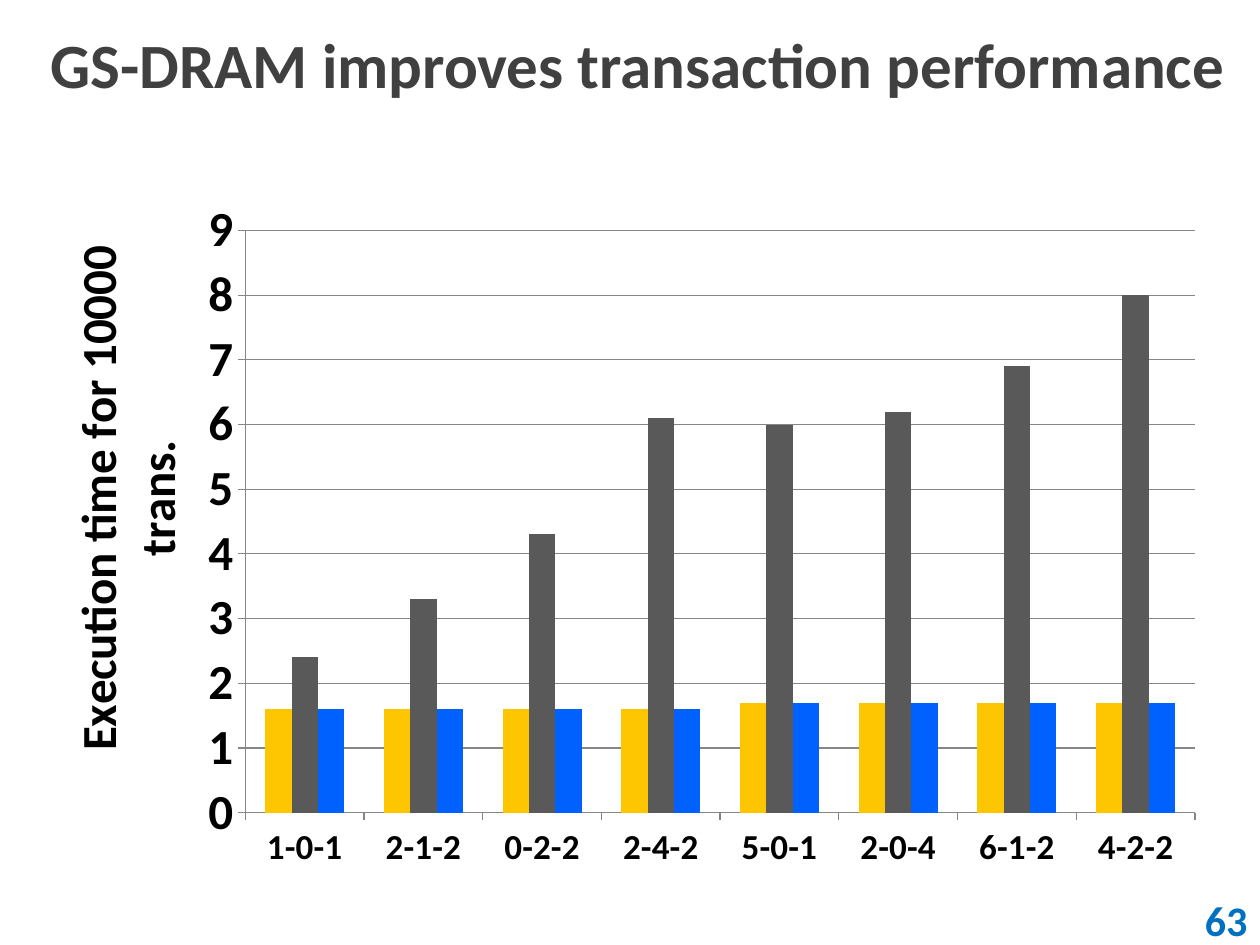
from dataclasses import dataclass

from lxml.etree import SubElement
from pptx import Presentation
from pptx.chart.data import CategoryChartData
from pptx.dml.color import RGBColor as Rgb
from pptx.enum.chart import XL_CHART_TYPE as ChartType, XL_TICK_MARK as Tick
from pptx.enum.shapes import MSO_SHAPE as Preset
from pptx.enum.text import MSO_ANCHOR as Anchor, PP_ALIGN as Align
from pptx.oxml.ns import qn
from pptx.util import Cm, Pt


@dataclass(frozen=True)
class Theme:
    font: str = "Calibri"
    paper: Rgb = Rgb(0xFF, 0xFF, 0xFF)
    heading: Rgb = Rgb(0x40, 0x40, 0x40)
    number: Rgb = Rgb(0x00, 0x70, 0xC0)
    ink: Rgb = Rgb(0x00, 0x00, 0x00)
    rule: Rgb = Rgb(0x86, 0x86, 0x86)
    yellow: Rgb = Rgb(0xFD, 0xC6, 0x00)
    grey: Rgb = Rgb(0x59, 0x59, 0x59)
    blue: Rgb = Rgb(0x00, 0x61, 0xFF)
    heading_size: Pt = Pt(36)
    number_size: Pt = Pt(24)
    value_size: Pt = Pt(28)
    category_size: Pt = Pt(20)


@dataclass(frozen=True)
class Label:
    text: str
    left: float
    top: float
    width: float
    height: float
    size: Pt
    color: Rgb
    align: Align
    inset: float


@dataclass(frozen=True)
class Series:
    name: str
    values: tuple
    color: Rgb


THEME = Theme()
LABELS = (
    Label("GS-DRAM improves transaction performance", 0, 0, 25.4, 2.54,
          THEME.heading_size, THEME.heading, Align.LEFT, 1.02),
    Label("63", 20.32, 18.03, 5.08, 1.02,
          THEME.number_size, THEME.number, Align.RIGHT, 0.25),
)
MIXES = ("1-0-1", "2-1-2", "0-2-2", "2-4-2", "5-0-1", "2-0-4", "6-1-2", "4-2-2")
STEADY = (1.6, 1.6, 1.6, 1.6, 1.7, 1.7, 1.7, 1.7)
TIMES = (
    Series("Series 1", STEADY, THEME.yellow),
    Series("Series 2", (2.4, 3.3, 4.3, 6.1, 6, 6.2, 6.9, 8), THEME.grey),
    Series("Series 3", STEADY, THEME.blue),
)


def apply_format(target, values: dict) -> None:
    for name, value in values.items():
        setattr(target, name, value)


def style_font(font, size: Pt, color: Rgb) -> None:
    apply_format(font, {"name": THEME.font, "size": size, "bold": True})
    font.color.rgb = color


def draw_label(slide, label: Label) -> None:
    box = slide.shapes.add_shape(Preset.RECTANGLE, Cm(label.left), Cm(label.top),
                                 Cm(label.width), Cm(label.height))
    box.shadow.inherit = False
    box.fill.solid()
    box.fill.fore_color.rgb = THEME.paper
    box.line.fill.background()
    frame = box.text_frame
    apply_format(frame, {
        "word_wrap": True, "vertical_anchor": Anchor.MIDDLE,
        "margin_left": Cm(label.inset), "margin_right": Cm(0.25),
        "margin_top": Cm(0.13), "margin_bottom": Cm(0.13),
    })
    paragraph = frame.paragraphs[0]
    paragraph.alignment = label.align
    run = paragraph.add_run()
    run.text = label.text
    style_font(run.font, label.size, label.color)


def place_in_chart(part, index: int, fractions: dict) -> None:
    for old in part.findall(qn("c:layout")):
        part.remove(old)
    layout = SubElement(part, qn("c:layout"))
    part.insert(index, layout)
    manual = SubElement(layout, qn("c:manualLayout"))
    for tag, value in fractions.items():
        SubElement(manual, qn(f"c:{tag}")).set("val", str(value))


def style_axis(axis, size: Pt) -> None:
    apply_format(axis, {"major_tick_mark": Tick.OUTSIDE, "minor_tick_mark": Tick.NONE})
    style_font(axis.tick_labels.font, size, THEME.ink)
    axis.format.line.color.rgb = THEME.rule


def draw_times(slide) -> None:
    data = CategoryChartData()
    data.categories = MIXES
    for series in TIMES:
        data.add_series(series.name, series.values)
    chart = slide.shapes.add_chart(ChartType.COLUMN_CLUSTERED, Cm(0.64), Cm(3.81),
                                   Cm(23.93), Cm(13.97), data).chart
    apply_format(chart, {"has_legend": False, "has_title": False})
    style_font(chart.font, THEME.value_size, THEME.ink)

    plot = chart.plots[0]
    apply_format(plot, {"gap_width": 150, "overlap": 0, "vary_by_categories": False})
    for bars, series in zip(plot.series, TIMES):
        bars.format.fill.solid()
        bars.format.fill.fore_color.rgb = series.color

    times = chart.value_axis
    style_axis(chart.category_axis, THEME.category_size)
    style_axis(times, THEME.value_size)
    apply_format(times, {"minimum_scale": 0, "maximum_scale": 9, "major_unit": 1,
                         "has_major_gridlines": True})
    times.major_gridlines.format.line.color.rgb = THEME.rule
    times.tick_labels.number_format = "General"
    times.tick_labels.number_format_is_linked = False

    caption = times.axis_title.text_frame.paragraphs[0].add_run()
    caption.text = "Execution time for 10000 trans."
    style_font(caption.font, THEME.value_size, THEME.ink)

    place_in_chart(times.axis_title._element, 1,
                   {"xMode": "edge", "yMode": "edge", "x": 0.02, "y": 0.07})
    place_in_chart(chart._chartSpace.chart.plotArea, 0,
                   {"layoutTarget": "inner", "xMode": "edge", "yMode": "edge",
                    "x": 0.18, "y": 0.06, "w": 0.8, "h": 0.84})


def main() -> None:
    deck = Presentation()
    apply_format(deck, {"slide_width": Cm(25.4), "slide_height": Cm(19.05)})
    slide = deck.slides.add_slide(deck.slide_layouts[6])
    for label in LABELS:
        draw_label(slide, label)
    draw_times(slide)
    deck.save("out.pptx")


if __name__ == "__main__":
    main()
